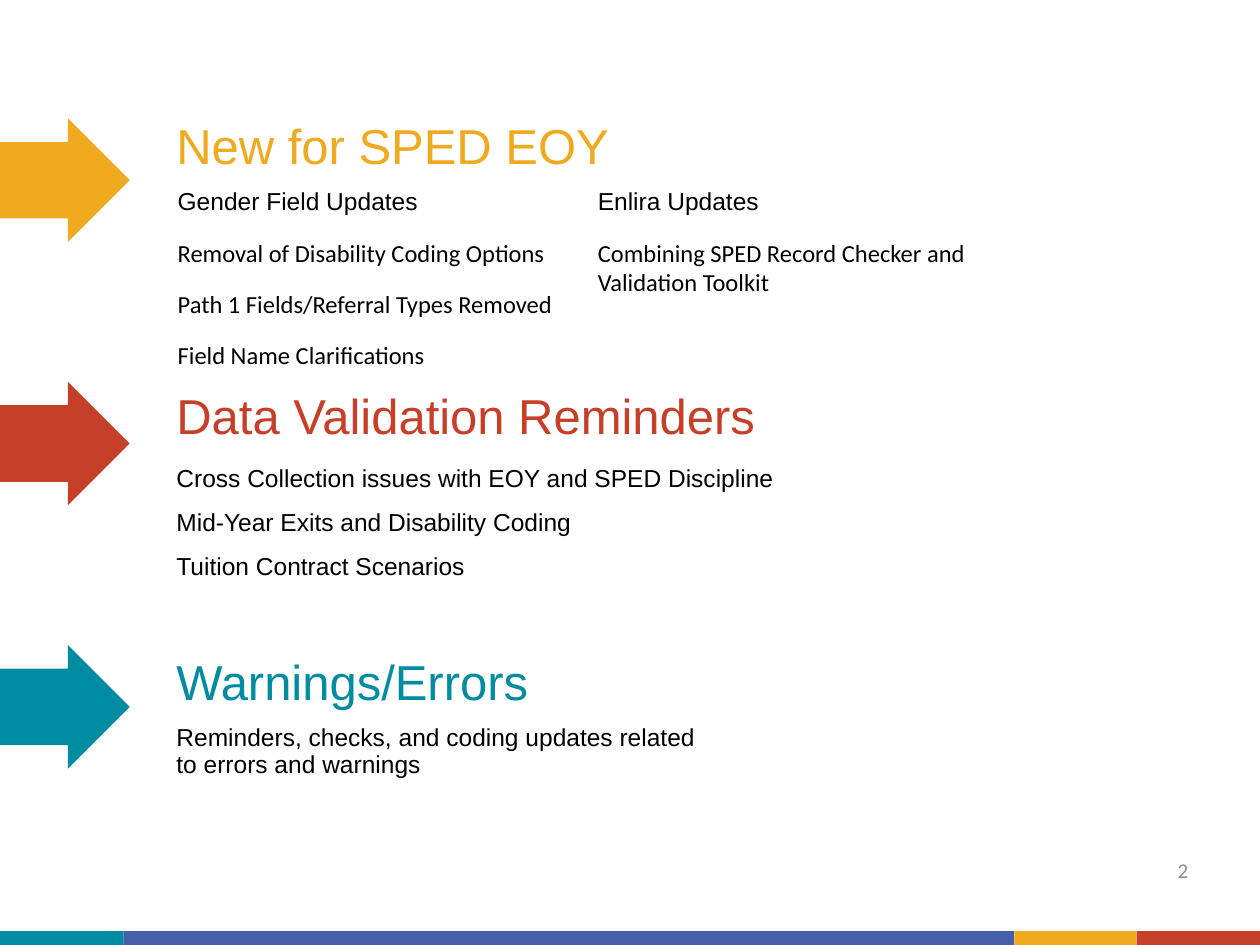
from dataclasses import dataclass

from lxml import etree
from pptx import Presentation
from pptx.dml.color import RGBColor
from pptx.enum import shapes, text
from pptx.oxml import ns
from pptx.util import Inches, Pt


@dataclass(frozen=True)
class Theme:
    gold: str = "EFAA1F"
    red: str = "C63F28"
    teal: str = "008CA0"
    blue: str = "455FA9"
    white: str = "FFFFFF"
    black: str = "000000"
    gray: str = "8C8C8C"
    heading_size: int = 28
    body_size: int = 14
    number_size: int = 12
    heading_font: str = "Arial"
    table_font: str = "Calibri"


@dataclass(frozen=True)
class Area:
    left: float
    top: float
    width: float
    height: float

    def lengths(self) -> list:
        return [Inches(n) for n in (self.left, self.top, self.width, self.height)]


@dataclass(frozen=True)
class Section:
    holder: int
    heading: str
    top: float
    color: str


@dataclass(frozen=True)
class Topics:
    holder: int
    area: Area
    lines: tuple


THEME = Theme()
SECTIONS = (
    Section(0, "New for SPED EOY", 0.92, THEME.gold),
    Section(1, "Data Validation Reminders", 3.06, THEME.red),
    Section(3, "Warnings/Errors", 5.17, THEME.teal),
)
TOPICS = (
    Topics(2, Area(1.3, 3.65, 6.38, 0.62), (
        "Cross Collection issues with EOY and SPED Discipline",
        "Mid-Year Exits and Disability Coding",
        "Tuition Contract Scenarios",
    )),
    Topics(4, Area(1.3, 5.71, 4.47, 0.8), (
        "Reminders, checks, and coding updates related to errors and warnings",
    )),
)
UPDATES = (
    ("Gender Field Updates", "Enlira Updates"),
    ("Removal of Disability Coding Options",
     "Combining SPED Record Checker and Validation Toolkit"),
    ("Path 1 Fields/Referral Types Removed", ""),
    ("Field Name Clarifications", ""),
)
STRIPES = (
    (THEME.teal, 0.98), (THEME.blue, 7.07), (THEME.gold, 0.97), (THEME.red, 0.98),
)


def write_paragraph(para, words: str, *, size: int = THEME.body_size,
                    font: str = THEME.heading_font, color: str = THEME.black,
                    align=text.PP_ALIGN.LEFT, spacing: float = 0.9,
                    before: int = 0) -> None:
    properties = para._p.get_or_add_pPr()
    properties.set("marL", "0")
    properties.set("indent", "0")
    etree.SubElement(properties, ns.qn("a:buNone"))
    para.alignment = align
    para.line_spacing = spacing
    para.space_before = Pt(before)
    span = para.add_run()
    span.text = words
    span.font.name = font
    span.font.size = Pt(size)
    span.font.bold = False
    span.font.color.rgb = RGBColor.from_string(color)


def draw_block(page, kind, area: Area, color: str):
    block = page.shapes.add_shape(kind, *area.lengths())
    block.shadow.inherit = False
    block.fill.solid()
    block.fill.fore_color.rgb = RGBColor.from_string(color)
    block.line.fill.background()
    return block


def draw_arrow(page, area: Area, color: str) -> None:
    arrow = draw_block(page, shapes.MSO_SHAPE.RIGHT_ARROW, area, color)
    arrow.adjustments[0] = 0.62
    arrow.adjustments[1] = 0.5


def fill_placeholder(page, holder: int, area: Area, lines: tuple, **format_options) -> None:
    box = page.placeholders[holder]
    box.left, box.top, box.width, box.height = area.lengths()
    frame = box.text_frame
    frame.word_wrap = True
    frame.auto_size = text.MSO_AUTO_SIZE.NONE
    frame.vertical_anchor = text.MSO_ANCHOR.TOP
    for position, line in enumerate(lines):
        para = frame.add_paragraph() if position else frame.paragraphs[0]
        write_paragraph(para, line, before=10 if position else 0, **format_options)


def draw_updates(page, area: Area) -> None:
    table = page.shapes.add_table(len(UPDATES), 2, *area.lengths()).table
    table.horz_banding = False
    table.cell(1, 1).merge(table.cell(2, 1))
    for row, entries in enumerate(UPDATES):
        for column, words in enumerate(entries):
            cell = table.cell(row, column)
            cell.fill.solid()
            cell.fill.fore_color.rgb = RGBColor.from_string(THEME.white)
            if words:
                font = THEME.table_font if row else THEME.heading_font
                write_paragraph(cell.text_frame.paragraphs[0], words, font=font, spacing=1.0)


def draw_number(page, area: Area, words: str) -> None:
    frame = page.shapes.add_textbox(*area.lengths()).text_frame
    frame.word_wrap = True
    frame.margin_left = 0
    frame.margin_right = Inches(0.07)
    frame.vertical_anchor = text.MSO_ANCHOR.MIDDLE
    write_paragraph(frame.paragraphs[0], words, size=THEME.number_size,
                    font=THEME.table_font, color=THEME.gray, align=text.PP_ALIGN.RIGHT)


def main() -> None:
    deck = Presentation()
    deck.slide_width, deck.slide_height = Inches(10), Inches(7.5)
    page = deck.slides.add_slide(deck.slide_layouts.get_by_name("Comparison"))

    for position, section in enumerate(SECTIONS):
        draw_arrow(page, Area(0, 0.94 + 2.09 * position, 1.03, 0.98), section.color)
        fill_placeholder(page, section.holder, Area(1.3, section.top, 6.68, 0.71),
                         (section.heading,), size=THEME.heading_size, color=section.color)

    left = 0
    for color, width in STRIPES:
        draw_block(page, shapes.MSO_SHAPE.RECTANGLE, Area(left, 7.39, width, 0.11), color)
        left += width

    for topics in TOPICS:
        fill_placeholder(page, topics.holder, topics.area, topics.lines)
    draw_updates(page, Area(1.31, 1.44, 6.67, 1.62))
    draw_number(page, Area(9.25, 6.72, 0.25, 0.4), "2")
    deck.save("out.pptx")


if __name__ == "__main__":
    main()
